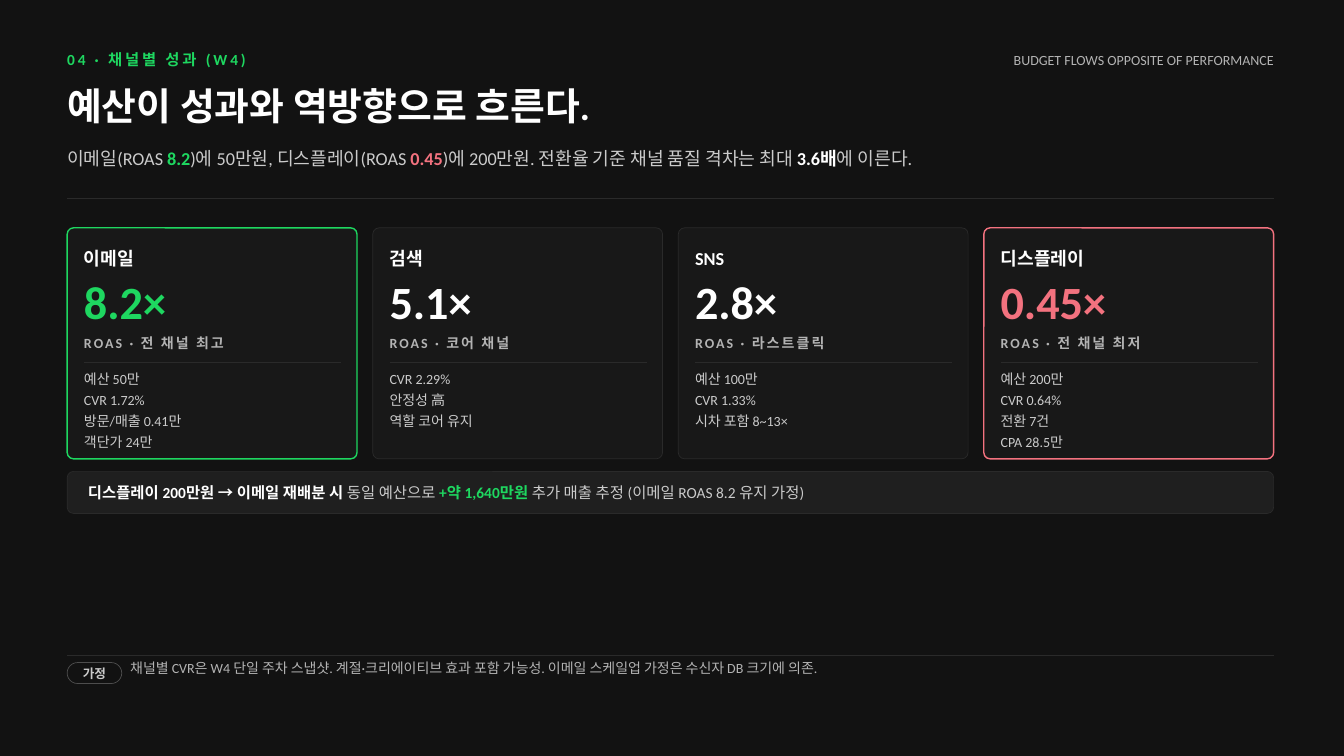
"""Builds the slide on channel results: four ROAS cards, a budget shift and a note."""
from lxml import etree
from pptx import Presentation
from pptx.dml.color import RGBColor
from pptx.enum.shapes import MSO_CONNECTOR as Link, MSO_SHAPE as Kind
from pptx.enum.text import MSO_ANCHOR as Anchor, MSO_AUTO_SIZE as Fit, PP_ALIGN as Align
from pptx.oxml.ns import qn
from pptx.util import Pt

PX = 9525
GREEN, RED, WHITE = "1ED760", "F3727F", "FFFFFF"
SOFT, GREY, EDGE, BACK = "CBCBCB", "B3B3B3", "2A2A2A", "121212"
LEFT, RIGHT = 64, 1213
WIDE = RIGHT - LEFT
tint = RGBColor.from_string

deck = Presentation()
deck.slide_width, deck.slide_height = 1280 * PX, 720 * PX
slide = deck.slides.add_slide(deck.slide_layouts[5])
slide.background.fill.solid()
slide.background.fill.fore_color.rgb = tint(BACK)
shapes = slide.shapes


def write(text, at=None, box=None, size=10, color=SOFT, bold=False, track=0,
          align=Align.LEFT, anchor=Anchor.MIDDLE, inset=0, pitch=None):
    """Sets text, one paragraph a line; a list holds (text, colour, bold) runs."""
    if box is None:
        box = shapes.add_textbox(*[n * PX for n in at])
    elif at:
        box.left, box.top, box.width, box.height = [n * PX for n in at]
    frame = box.text_frame
    frame.word_wrap, frame.auto_size = True, Fit.NONE
    frame.vertical_anchor = anchor
    frame.margin_left = frame.margin_right = inset * PX
    frame.margin_top = frame.margin_bottom = 0
    if isinstance(text, str):
        lines = [[(line, color, bold)] for line in text.split("\n")]
    else:
        lines = [text]
    for i, line in enumerate(lines):
        para = frame.add_paragraph() if i else frame.paragraphs[0]
        para.alignment = align
        if pitch:
            para.line_spacing = Pt(pitch)
        for words, hue, heavy in line:
            run = para.add_run()
            run.text = words
            font = run.font
            font.name, font.size, font.bold = "Calibri", Pt(size), heavy
            font.color.rgb = tint(hue)
            if track:
                run._r.get_or_add_rPr().set("spc", str(int(track * 100)))


def panel(x, y, w, h, fill, edge, weight=0.5, round=6):
    """Adds a rounded box with a corner radius in px."""
    box = shapes.add_shape(Kind.ROUNDED_RECTANGLE, x * PX, y * PX, w * PX, h * PX)
    box.adjustments[0] = round / min(w, h)
    box.shadow.inherit = False
    box.fill.solid()
    box.fill.fore_color.rgb = tint(fill)
    box.line.color.rgb = tint(edge)
    box.line.width = Pt(weight)
    return box


write("예산이 성과와 역방향으로 흐른다.", (LEFT, 79, WIDE, 54), box=shapes.title,
      size=27, color=WHITE, bold=True, anchor=Anchor.TOP)
write("04 · 채널별 성과 (W4)", (LEFT, 48, 747, 18), size=11, color=GREEN,
      bold=True, track=2)
write("BUDGET FLOWS OPPOSITE OF PERFORMANCE", (811, 48, 402, 18), color=GREY,
      align=Align.RIGHT)
write([("이메일(ROAS ", SOFT, False), ("8.2", GREEN, True),
       (")에 50만원, 디스플레이(ROAS ", SOFT, False), ("0.45", RED, True),
       (")에 200만원. 전환율 기준 채널 품질 격차는 최대 ", SOFT, False),
       ("3.6배", WHITE, True), ("에 이른다.", SOFT, False)],
      (LEFT, 140, WIDE, 40), size=13, anchor=Anchor.TOP)

cards = [
    ("이메일", "8.2×", "전 채널 최고", GREEN,
     "예산 50만\nCVR 1.72%\n방문/매출 0.41만\n객단가 24만"),
    ("검색", "5.1×", "코어 채널", None, "CVR 2.29%\n안정성 高\n역할 코어 유지"),
    ("SNS", "2.8×", "라스트클릭", None, "예산 100만\nCVR 1.33%\n시차 포함 8~13×"),
    ("디스플레이", "0.45×", "전 채널 최저", RED,
     "예산 200만\nCVR 0.64%\n전환 7건\nCPA 28.5만"),
]
rules = [(LEFT, 189, WIDE, 0.75), (LEFT, 624, WIDE, 0.75)]
for i, (name, score, tag, mark, facts) in enumerate(cards):
    x = LEFT + i * 291
    panel(x, 217, 276, 220, "181818", mark or EDGE, 1 if mark else 0.5)
    x += 16
    write(name, (x, 234, 245, 23), size=13, color=WHITE, bold=True)
    write(score, (x, 260, 245, 54), size=33, color=mark or WHITE, bold=True)
    write("ROAS · " + tag, (x, 318, 245, 17), color=GREY, bold=True, track=1.5)
    write(facts, (x, 349, 245, 82), anchor=Anchor.TOP, pitch=15)
    rules.append((x, 345, 245, 0.5))

for x, y, w, weight in rules:
    rule = shapes.add_connector(Link.STRAIGHT, x * PX, y * PX, (x + w) * PX, y * PX)
    rule.line.color.rgb = tint(EDGE)
    rule.line.width = Pt(weight)
    etree.SubElement(rule._element.spPr, qn("a:effectLst"))

write([("디스플레이 200만원 → 이메일 재배분 시", WHITE, True),
       (" 동일 예산으로 ", SOFT, False), ("+약 1,640만원", GREEN, True),
       (" 추가 매출 추정 (이메일 ROAS 8.2 유지 가정)", SOFT, False)],
      box=panel(LEFT, 449, WIDE, 40, "1F1F1F", EDGE), size=11, inset=18)

write("가정", box=panel(LEFT, 631, 52, 20, BACK, "4D4D4D", round=10), size=9,
      bold=True, align=Align.CENTER)
write("채널별 CVR은 W4 단일 주차 스냅샷. 계절·크리에이티브 효과 포함 가능성. "
      "이메일 스케일업 가정은 수신자 DB 크기에 의존.",
      (124, 628, 1089, 41), color=GREY, anchor=Anchor.TOP)

deck.save("out.pptx")
